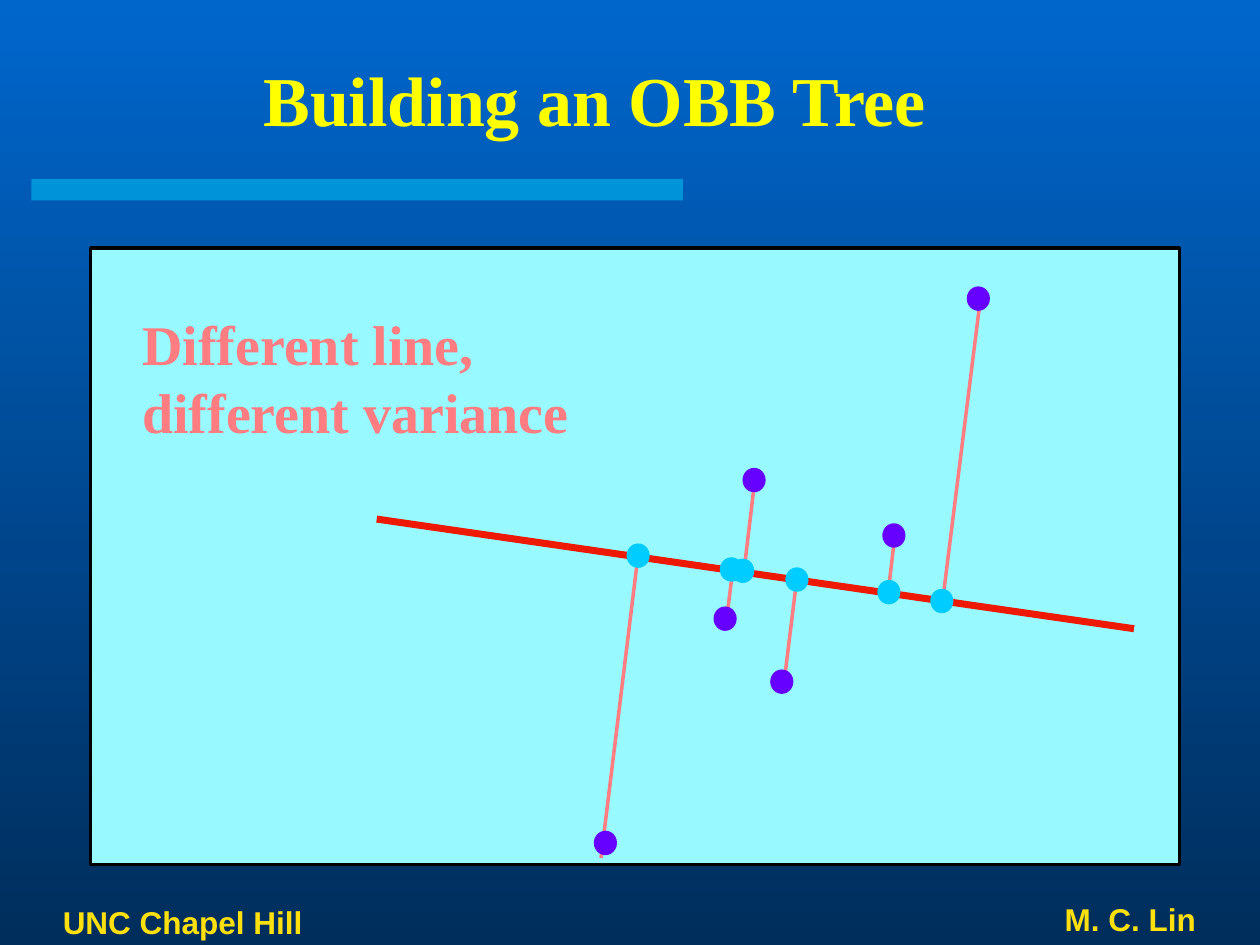
from lxml import etree
from pptx import Presentation
from pptx.dml.color import RGBColor
from pptx.enum.shapes import MSO_CONNECTOR, MSO_SHAPE
from pptx.enum.text import MSO_ANCHOR, PP_ALIGN
from pptx.oxml.ns import qn
from pptx.util import Inches, Pt

LINE = MSO_CONNECTOR.STRAIGHT
RECT, OVAL = MSO_SHAPE.RECTANGLE, MSO_SHAPE.OVAL
TOP, MIDDLE = MSO_ANCHOR.TOP, MSO_ANCHOR.MIDDLE
LEFT, CENTER, RIGHT = PP_ALIGN.LEFT, PP_ALIGN.CENTER, PP_ALIGN.RIGHT
SERIF, SANS = "Times New Roman", "Arial"
PINK, PURPLE, CYAN, RED = "FF7C80", "6600FF", "00CCFF", "ED1903"


def rgb(value):
    return RGBColor.from_string(value)


prs = Presentation()
prs.slide_width, prs.slide_height = Inches(10), Inches(7.5)
s = prs.slides.add_slide(prs.slide_layouts[6])

bg = s.background.fill
bg.gradient()
bg.gradient_angle = 270
for stop, color in zip(bg.gradient_stops, ("0066CC", "002E5C")):
    stop.color.rgb = rgb(color)

# Half-transparent bar under the title
bar = s.shapes.add_shape(RECT, Inches(0.25), Inches(1.42), Inches(5.17), Inches(0.17))
bar.shadow.inherit = False
bar.fill.solid()
bar.fill.fore_color.rgb = rgb(CYAN)
bar.line.fill.background()
bar_color = bar.fill._xPr.find(qn("a:solidFill"))[0]
etree.SubElement(bar_color, qn("a:alpha"), val="50000")

panel = s.shapes.add_shape(RECT, Inches(0.72), Inches(1.97), Inches(8.64), Inches(4.89))
panel.shadow.inherit = False
panel.fill.solid()
panel.fill.fore_color.rgb = rgb("98FAFF")
panel.line.color.rgb = rgb("000000")
panel.line.width = Pt(2)

# Projection lines first, then the fitted line on top: ends, colour, width
projections = [
    (7.78, 2.38, 7.48, 4.78),
    (7.1, 4.27, 7.05, 4.69),
    (6.32, 4.63, 6.22, 5.44),
    (5.99, 3.82, 5.9, 4.57),
    (5.82, 4.49, 5.76, 4.97),
    (5.06, 4.44, 4.77, 6.81),
]
lines = [(ends, PINK, 2) for ends in projections]
lines.append(((2.99, 4.12, 9, 4.99), RED, 4))
for ends, color, width in lines:
    line = s.shapes.add_connector(LINE, *[Inches(v) for v in ends])
    line.line.color.rgb = rgb(color)
    line.line.width = Pt(width)
    etree.SubElement(line._element.spPr, qn("a:effectLst"))

# Data points and their projections on the fitted line: left, top
points = [(7.68, 2.28), (5.9, 3.72), (7.01, 4.16), (5.67, 4.82), (6.12, 5.32), (4.72, 6.6)]
projected = [(4.98, 4.32), (5.81, 4.44), (5.72, 4.43), (6.24, 4.51), (6.97, 4.61), (7.39, 4.68)]
for color, dots in ((PURPLE, points), (CYAN, projected)):
    for x, y in dots:
        dot = s.shapes.add_shape(OVAL, Inches(x), Inches(y), Inches(0.17), Inches(0.18))
        dot.shadow.inherit = False
        dot.fill.solid()
        dot.fill.fore_color.rgb = rgb(color)
        dot.line.color.rgb = rgb(color)
        dot.line.width = Pt(1)

# Text, box, font, size, colour, alignment, anchor
texts = [
    ("Building an OBB Tree", (0.29, 0.32, 8.86, 0.93), SERIF, 40, "FFFF00", CENTER, MIDDLE),
    ("Different line,\ndifferent variance", (1.03, 2.41, 4, 1.17), SERIF, 32, PINK, LEFT, TOP),
    ("UNC Chapel Hill", (0.4, 7.14, 2.6, 0.36), SANS, 18, "FDE00D", LEFT, MIDDLE),
    ("M. C. Lin", (5.22, 7.09, 4.37, 0.41), SANS, 18, "FDE00D", RIGHT, MIDDLE),
]
for text, box, font, size, color, align, anchor in texts:
    tf = s.shapes.add_textbox(*[Inches(v) for v in box]).text_frame
    tf.text = text
    tf.word_wrap = True
    tf.vertical_anchor = anchor
    for p in tf.paragraphs:
        p.alignment = align
        for r in p.runs:
            r.font.name = font
            r.font.size = Pt(size)
            r.font.bold = True
            r.font.color.rgb = rgb(color)

prs.save("out.pptx")
